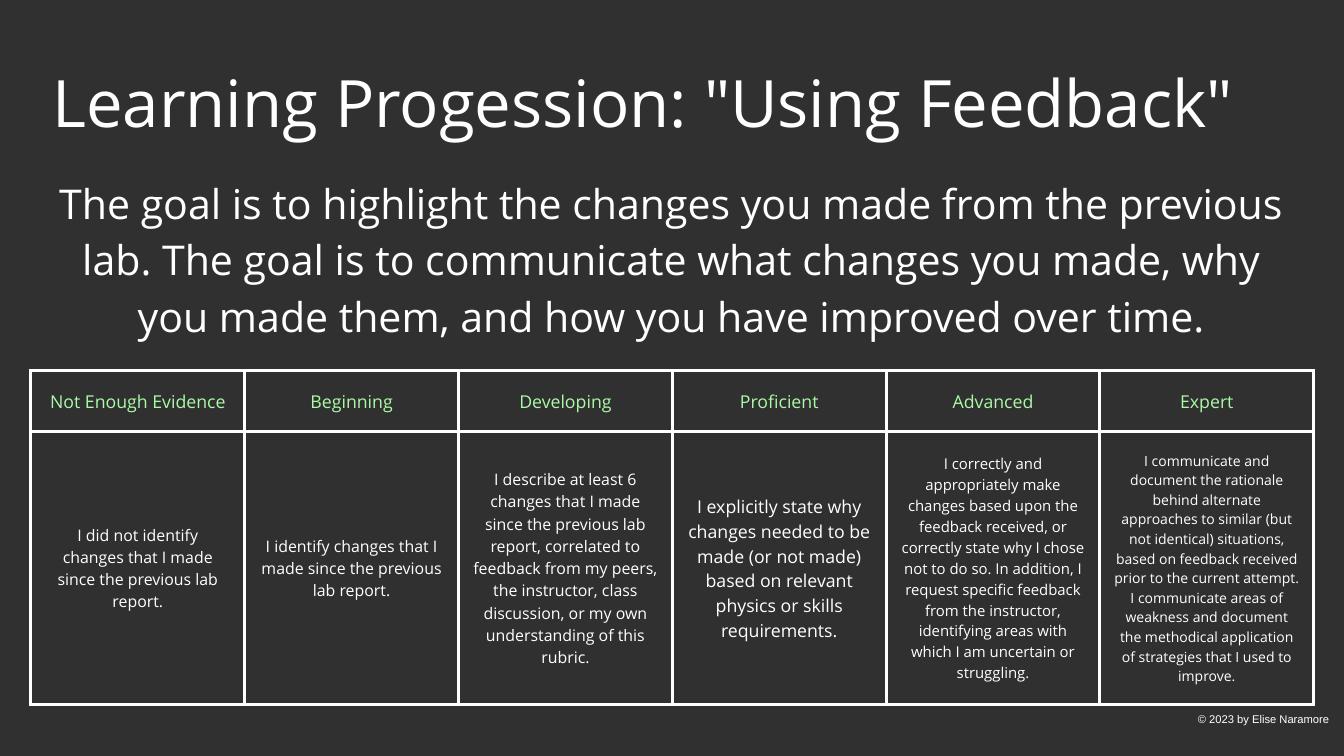
"""Build the learning progression slide on using feedback."""
from dataclasses import dataclass

from lxml import etree
from pptx import Presentation
from pptx import util as u
from pptx.dml.color import RGBColor
from pptx.enum import text as t
from pptx.oxml import ns


@dataclass(frozen=True)
class Theme:
    back: str = "303030"
    white: str = "FFFFFF"
    green: str = "ABFAA6"
    sans: str = "Open Sans"
    plain: str = "Arial"
    title: int = 70
    goal: int = 44
    head: int = 19
    note: int = 12
    line: float = 3.75


@dataclass(frozen=True)
class Box:
    left: float
    top: float
    width: float
    height: float

    def cm(self) -> tuple:
        return tuple(u.Cm(v) for v in (self.left, self.top, self.width, self.height))


@dataclass(frozen=True)
class Style:
    size: int
    lead: float
    color: str
    font: str
    align: t.PP_ALIGN = t.PP_ALIGN.CENTER


@dataclass(frozen=True)
class Level:
    name: str
    size: int
    words: str


THEME = Theme()
TITLE = "Learning Progession: \"Using Feedback\""
GOAL = ("The goal is to highlight the changes you made from the previous lab. "
        "The goal is to communicate what changes you made, why you made them, "
        "and how you have improved over time.")
NOTE = "© 2023 by Elise Naramore"
LEVELS = (
    Level("Not Enough Evidence", 17,
          "I did not identify changes that I made since the previous lab report."),
    Level("Beginning", 17,
          "I identify changes that I made since the previous lab report."),
    Level("Developing", 17,
          "I describe at least 6 changes that I made since the previous lab report, "
          "correlated to feedback from my peers, the instructor, class discussion, "
          "or my own understanding of this rubric."),
    Level("Proficient", 19,
          "I explicitly state why changes needed to be made (or not made) based on "
          "relevant physics or skills requirements."),
    Level("Advanced", 16,
          "I correctly and appropriately make changes based upon the feedback "
          "received, or correctly state why I chose not to do so. In addition, I "
          "request specific feedback from the instructor, identifying areas with "
          "which I am uncertain or struggling."),
    Level("Expert", 15,
          "I communicate and document the rationale behind alternate approaches to "
          "similar (but not identical) situations, based on feedback received prior "
          "to the current attempt. I communicate areas of weakness and document the "
          "methodical application of strategies that I used to improve."),
)


def write(frame, words: str, style: Style) -> None:
    frame.text = words
    para = frame.paragraphs[0]
    props = para._p.get_or_add_pPr()
    props.set("marL", "0")
    props.set("indent", "0")
    etree.SubElement(props, ns.qn("a:buNone"))
    para.alignment = style.align
    para.line_spacing = u.Pt(round(style.size * style.lead, 1))
    para.space_before = u.Pt(0)
    para.font.size = u.Pt(style.size)
    para.font.name = style.font
    para.font.color.rgb = RGBColor.from_string(style.color)


def place(shape, box: Box, words: str, style: Style) -> None:
    shape.left, shape.top, shape.width, shape.height = box.cm()
    frame = shape.text_frame
    frame.word_wrap = True
    frame.auto_size = t.MSO_AUTO_SIZE.NONE
    frame.vertical_anchor = t.MSO_ANCHOR.TOP
    frame.margin_left = frame.margin_right = 0
    frame.margin_top = frame.margin_bottom = 0
    write(frame, words, style)


def edge(cell) -> None:
    props = cell._tc.get_or_add_tcPr()
    for side in ("lnL", "lnR", "lnT", "lnB"):
        line = etree.SubElement(props, ns.qn(f"a:{side}"), w=str(u.Pt(THEME.line)))
        fill = etree.SubElement(line, ns.qn("a:solidFill"))
        etree.SubElement(fill, ns.qn("a:srgbClr"), val=THEME.white)


def fill_cell(cell, words: str, style: Style) -> None:
    edge(cell)
    cell.fill.background()
    cell.vertical_anchor = t.MSO_ANCHOR.MIDDLE
    cell.margin_left = cell.margin_right = u.Cm(0.53)
    cell.margin_top = cell.margin_bottom = u.Cm(0.53)
    write(cell.text_frame, words, style)


def add_grid(slide, box: Box, rows: tuple) -> None:
    grid = slide.shapes.add_table(len(rows), len(LEVELS), *box.cm()).table
    grid.first_row = grid.horz_banding = False
    for row, high in zip(grid.rows, rows):
        row.height = u.Cm(high)
    head = Style(THEME.head, 1.4, THEME.green, THEME.sans)
    for col, level in enumerate(LEVELS):
        fill_cell(grid.cell(0, col), level.name, head)
        body = Style(level.size, 1.4, THEME.white, THEME.sans)
        fill_cell(grid.cell(1, col), level.words, body)


def main() -> None:
    deck = Presentation()
    deck.slide_width, deck.slide_height = u.Cm(50.8), u.Cm(28.58)
    slide = deck.slides.add_slide(deck.slide_layouts[1])
    fill = slide.background.fill
    fill.solid()
    fill.fore_color.rgb = RGBColor.from_string(THEME.back)

    place(slide.shapes.title, Box(1.98, 2.36, 47.9, 3), TITLE,
          Style(THEME.title, 1.2, THEME.white, THEME.sans, t.PP_ALIGN.LEFT))
    place(slide.placeholders[1], Box(1.98, 6.45, 46.84, 6.27), GOAL,
          Style(THEME.goal, 1.38, THEME.white, THEME.sans))
    note = Box(39.57, 26.92, 10.68, 1.12)
    place(slide.shapes.add_textbox(*note.cm()), note, NOTE,
          Style(THEME.note, 1.2, THEME.white, THEME.plain, t.PP_ALIGN.RIGHT))
    add_grid(slide, Box(1.17, 14.02, 48.49, 12.6), (2.29, 10.34))
    deck.save("out.pptx")


if __name__ == "__main__":
    main()
